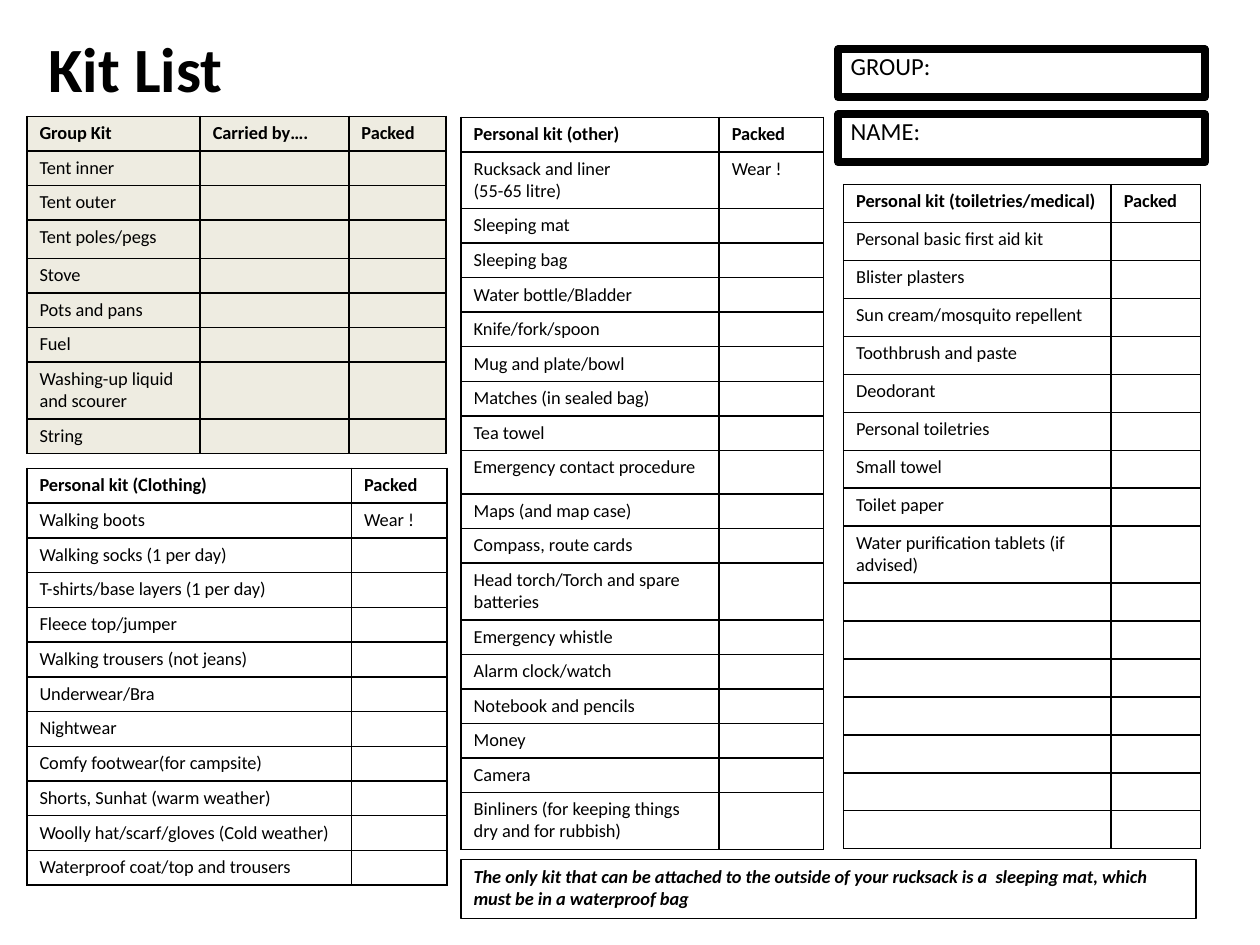
from lxml import etree
from pptx import Presentation
from pptx.dml.color import RGBColor
from pptx.enum.shapes import MSO_SHAPE
from pptx.enum.text import MSO_ANCHOR, PP_ALIGN
from pptx.oxml.ns import qn
from pptx.util import Pt

RECT = MSO_SHAPE.RECTANGLE
TOP, MIDDLE = MSO_ANCHOR.TOP, MSO_ANCHOR.MIDDLE
LEFT, CENTER = PP_ALIGN.LEFT, PP_ALIGN.CENTER
TITLE_ONLY = 5

GROUP_KIT = ["Tent inner", "Tent outer", "Tent poles/pegs", "Stove", "Pots and pans",
             "Fuel", "Washing-up liquid and scourer", "String"]
CLOTHING = ["Walking boots", "Walking socks (1 per day)",
            "T-shirts/base layers (1 per day)", "Fleece top/jumper",
            "Walking trousers (not jeans)", "Underwear/Bra", "Nightwear",
            "Comfy footwear(for campsite)", "Shorts, Sunhat (warm weather)",
            "Woolly hat/scarf/gloves (Cold weather)",
            "Waterproof coat/top and trousers"]
OTHER = ["Rucksack and liner\n(55-65 litre)", "Sleeping mat", "Sleeping bag",
         "Water bottle/Bladder", "Knife/fork/spoon", "Mug and plate/bowl",
         "Matches (in sealed bag)", "Tea towel", "Emergency contact procedure",
         "Maps (and map case)", "Compass, route cards",
         "Head torch/Torch and spare batteries", "Emergency whistle",
         "Alarm clock/watch", "Notebook and pencils", "Money", "Camera",
         "Binliners (for keeping things dry and for rubbish)"]
TOILETRIES = ["Personal basic first aid kit", "Blister plasters",
              "Sun cream/mosquito repellent", "Toothbrush and paste", "Deodorant",
              "Personal toiletries", "Small towel", "Toilet paper",
              "Water purification tablets (if advised)"] + [""] * 7


def rgb(color):
    return RGBColor.from_string(color)


def write(tf, text, font="Calibri", size=10.5, color="000000", bold=False,
          italic=False, align=LEFT):
    for i, line in enumerate(text.split("\n")):
        p = tf.paragraphs[0] if i == 0 else tf.add_paragraph()
        p.alignment = align
        if not line:
            # The end mark keeps an empty cell as low as a filled one
            etree.SubElement(p._p, qn("a:endParaRPr"), sz=str(int(size * 100)))
            continue
        r = p.add_run()
        r.text = line
        f = r.font
        f.name, f.size, f.bold, f.italic = font, Pt(size), bold, italic
        f.color.rgb = rgb(color)


def add_borders(cell, color, width):
    tcPr = cell._tc.get_or_add_tcPr()
    for i, side in enumerate(("lnL", "lnR", "lnT", "lnB")):
        ln = etree.Element(qn(f"a:{side}"), w=str(Pt(width)))
        fill = etree.SubElement(ln, qn("a:solidFill"))
        etree.SubElement(fill, qn("a:srgbClr"), val=color)
        tcPr.insert(i, ln)


class KitSlide:
    ink = "000000"
    shade = "EEECE1"

    def __init__(self, prs):
        self.s = prs.slides.add_slide(prs.slide_layouts[TITLE_ONLY])

    def title(self, text, x, y, w, h):
        sp = self.s.shapes.title
        sp.left, sp.top, sp.width, sp.height = Pt(x), Pt(y), Pt(w), Pt(h)
        tf = sp.text_frame
        tf.word_wrap = False
        tf.vertical_anchor = MIDDLE
        write(tf, text, size=36, bold=True, align=CENTER)

    def box(self, text, x, y, w, h, line, anchor=TOP, top=3.6, bottom=3.6, **fmt):
        sp = self.s.shapes.add_shape(RECT, Pt(x), Pt(y), Pt(w), Pt(h))
        sp.shadow.inherit = False
        sp.fill.background()
        sp.line.color.rgb = rgb(self.ink)
        sp.line.width = Pt(line)
        tf = sp.text_frame
        tf.word_wrap = True
        tf.vertical_anchor = anchor
        tf.margin_top, tf.margin_bottom = Pt(top), Pt(bottom)
        write(tf, text, **fmt)

    def checklist(self, head, items, x, y, widths, row, tall=None, notes=None,
                  fill=None):
        """Draw a table; tall maps rows to heights, notes rows to last-column text."""
        tall, notes = tall or {}, notes or {}
        blanks = [""] * (len(head) - 2)
        rows = [head] + [[item, *blanks, notes.get(i, "")]
                         for i, item in enumerate(items, 1)]
        heights = [tall.get(i, row) for i in range(len(rows))]
        table = self.s.shapes.add_table(len(rows), len(head), Pt(x), Pt(y),
                                        Pt(sum(widths)), Pt(sum(heights))).table
        table.horz_banding = table.first_row = False
        for col, w in zip(table.columns, widths):
            col.width = Pt(w)
        for i, (texts, h) in enumerate(zip(rows, heights)):
            table.rows[i].height = Pt(h)
            for cell, text in zip(table.rows[i].cells, texts):
                cell.margin_top = cell.margin_bottom = Pt(3.4)
                if fill:
                    cell.fill.solid()
                    cell.fill.fore_color.rgb = rgb(fill)
                else:
                    cell.fill.background()
                add_borders(cell, self.ink, 1)
                write(cell.text_frame, text, bold=i == 0)


def main():
    prs = Presentation()
    prs.slide_width, prs.slide_height = Pt(720), Pt(540)
    kit = KitSlide(prs)
    kit.title("Kit List", 20, 13, 115, 51)
    for i, label in enumerate(("GROUP:", "NAME:")):
        kit.box(label, 479, 28.2 + 37.2 * i, 209.5, 27.4, 4.5, anchor=MIDDLE,
                top=0, bottom=8.5, size=14)

    kit.checklist(["Group Kit", "Carried by….", "Packed"], GROUP_KIT, 15.4, 66.5,
                  [99, 85, 55.5], 19.75, tall={3: 22, 7: 32.5}, fill=kit.shade)
    kit.checklist(["Personal kit (toiletries/medical)", "Packed"], TOILETRIES,
                  482, 105.5, [153, 51], 21.7, tall={9: 32.5})
    kit.checklist(["Personal kit (other)", "Packed"], OTHER, 263.5, 67,
                  [147.5, 59.5], 19.75, tall={1: 32.5, 9: 24.9, 12: 32.5, 18: 32.5},
                  notes={1: "Wear !"})
    kit.checklist(["Personal kit (Clothing)", "Packed"], CLOTHING, 15.4, 267.7,
                  [185.5, 54.5], 19.85, notes={1: "Wear !"})

    kit.box("The only kit that can be attached to the outside of your rucksack is a"
            "  sleeping mat, which must be in a waterproof bag",
            263.5, 491, 420, 33.8, 0.75, bold=True, italic=True)
    prs.save("out.pptx")


if __name__ == "__main__":
    main()
